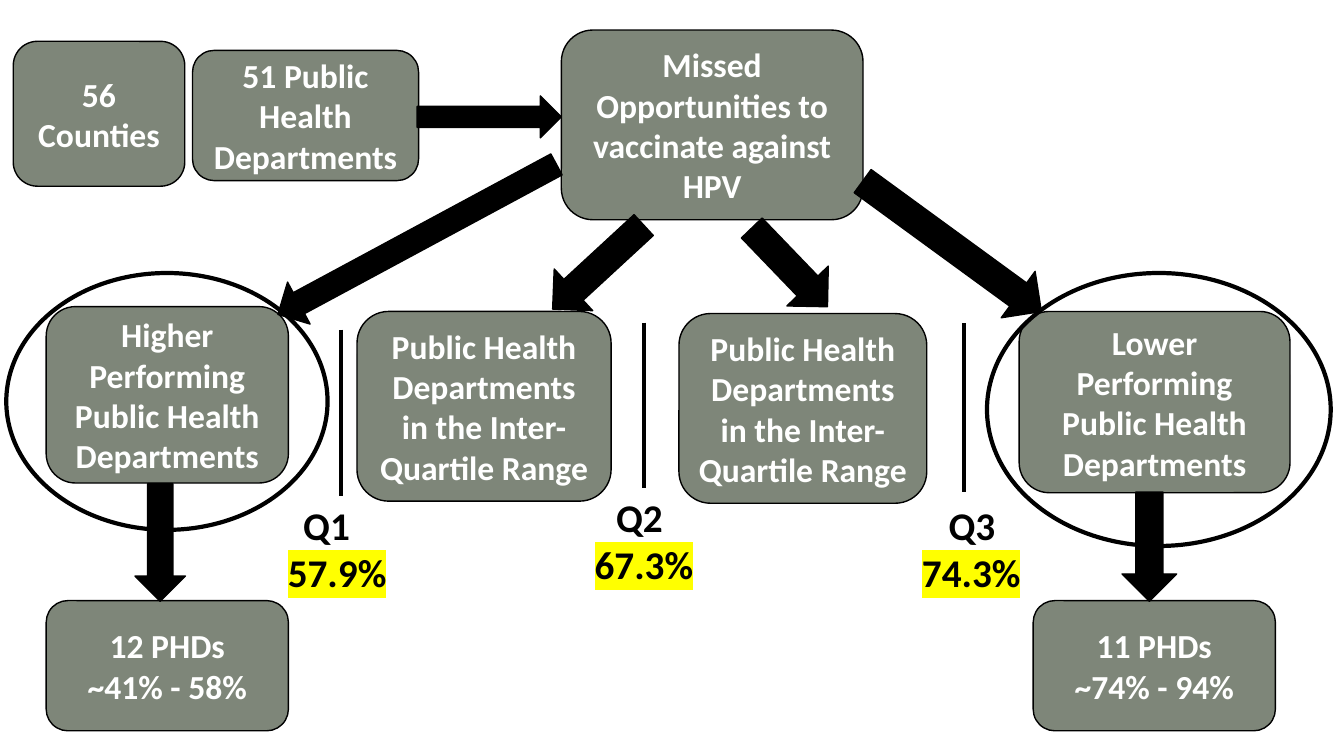
import pptx
import pptx.dml.color
import pptx.enum.shapes
import pptx.enum.text
import pptx.oxml.ns
import pptx.oxml.xmlchemy
import pptx.util

Pt = pptx.util.Pt
SHAPES = pptx.enum.shapes.MSO_SHAPE
ALIGN = pptx.enum.text.PP_ALIGN
FONT = "Calibri"
COLORS = {"box": "7E8679", "ink": "000000", "paper": "FFFFFF", "mark": "FFFF00"}

INTER_QUARTILE = "Public Health Departments in the Inter-Quartile Range"
BOXES = [
    (401, 21.5, 215.5, 135.5, ["Missed Opportunities to vaccinate against HPV"]),
    (485, 224, 177, 135.5, [INTER_QUARTILE]),
    (255, 222.5, 181.5, 135.5, [INTER_QUARTILE]),
    (33, 219, 173, 126, ["Higher Performing Public Health Departments"]),
    (728, 222.5, 193.5, 129.5, ["Lower Performing Public Health Departments"]),
    (9.5, 29.5, 122.5, 103.5, ["56 Counties"]),
    (137.5, 36, 161.5, 93, ["51 Public Health Departments"]),
    (738, 429, 173, 93, ["11 PHDs", "~74% - 94%"]),
    (33, 429, 173, 93, ["12 PHDs", "~41% - 58%"]),
]
ARROWS = [
    (SHAPES.RIGHT_ARROW, 298, 68.5, 103, 30, 0),
    (SHAPES.RIGHT_ARROW, 185, 154, 226, 34, 151.7),
    (SHAPES.RIGHT_ARROW, 383, 170.5, 88.5, 40.5, 137.3),
    (SHAPES.RIGHT_ARROW, 525, 170.5, 78, 41, 46.1),
    (SHAPES.RIGHT_ARROW, 601, 155.5, 158, 41, 36.1),
    (SHAPES.DOWN_ARROW, 96.5, 345.5, 36, 84, 0),
    (SHAPES.DOWN_ARROW, 801.5, 351.5, 39, 78, 0),
]
QUARTILES = [
    (198.5, 354.5, 89.5, "Q1", "57.9%", ALIGN.LEFT, 11, 0),
    (398, 348.5, 117.5, "Q2", "67.3%", ALIGN.CENTER, 0, 6.3),
    (651.5, 354.5, 87, "Q3", "74.3%", ALIGN.LEFT, 19, 0),
]
DIVIDERS = [(243.5, 235.5, 354.5), (460, 230.5, 348.5), (688.5, 231, 351.5)]
RINGS = [(4.5, 195, 229.5, 183.5), (705, 195, 245.5, 195)]


def rgb(name):
    """Return the named colour."""
    return pptx.dml.color.RGBColor.from_string(COLORS[name])


def add_text(paragraph, text, size, color):
    """Add one bold run and return it."""
    run = paragraph.add_run()
    run.text = text
    run.font.name, run.font.size, run.font.bold = FONT, Pt(size), True
    run.font.color.rgb = rgb(color)
    return run


def highlight(run):
    """Mark a formatted run in the highlight colour."""
    mark = pptx.oxml.xmlchemy.OxmlElement("a:highlight")
    color = pptx.oxml.xmlchemy.OxmlElement("a:srgbClr")
    color.set("val", COLORS["mark"])
    mark.append(color)
    run.font._element.find(pptx.oxml.ns.qn("a:latin")).addprevious(mark)


def add_outlined(slide, kind, left, top, width, height, fill=None, weight=1):
    """Add a preset shape with a black outline and an optional fill."""
    shape = slide.shapes.add_shape(kind, Pt(left), Pt(top), Pt(width), Pt(height))
    shape.shadow.inherit = False
    if fill:
        shape.fill.solid()
        shape.fill.fore_color.rgb = rgb(fill)
    else:
        shape.fill.background()
    shape.line.color.rgb = rgb("ink")
    shape.line.width = Pt(weight)
    return shape


def add_box(slide, left, top, width, height, lines):
    """Add a rounded box with centred white lines of text."""
    shape = add_outlined(slide, SHAPES.ROUNDED_RECTANGLE, left, top, width, height, "box")
    frame = shape.text_frame
    frame.word_wrap = True
    frame.vertical_anchor = pptx.enum.text.MSO_ANCHOR.MIDDLE
    for index, line in enumerate(lines):
        paragraph = frame.add_paragraph() if index else frame.paragraphs[0]
        paragraph.alignment = ALIGN.CENTER
        add_text(paragraph, line, 24, "paper")


def add_arrow(slide, kind, left, top, width, height, rotation):
    """Add a black block arrow."""
    add_outlined(slide, kind, left, top, width, height, "ink").rotation = rotation


def add_quartile(slide, left, top, width, name, value, alignment, *indents):
    """Add a quartile name above its highlighted value."""
    box = slide.shapes.add_textbox(Pt(left), Pt(top), Pt(width), Pt(75))
    frame = box.text_frame
    frame.word_wrap = True
    frame.auto_size = pptx.enum.text.MSO_AUTO_SIZE.SHAPE_TO_FIT_TEXT
    paragraphs = [frame.paragraphs[0], frame.add_paragraph()]
    for paragraph, indent in zip(paragraphs, indents):
        paragraph.alignment = alignment
        paragraph._p.get_or_add_pPr().set("marL", str(Pt(indent)))
    add_text(paragraphs[0], name, 28, "ink")
    highlight(add_text(paragraphs[1], value, 28, "ink"))


def add_divider(slide, x, top, bottom):
    """Add a vertical line between two groups."""
    line = slide.shapes.add_connector(
        pptx.enum.shapes.MSO_CONNECTOR.STRAIGHT, Pt(x), Pt(top), Pt(x), Pt(bottom))
    line.line.color.rgb = rgb("ink")
    line.line.width = Pt(3)
    line._element.spPr.append(pptx.oxml.xmlchemy.OxmlElement("a:effectLst"))


def main():
    """Build the slide and save it."""
    presentation = pptx.Presentation()
    presentation.slide_width, presentation.slide_height = Pt(960), Pt(540)
    slide = presentation.slides.add_slide(presentation.slide_layouts[6])
    for box in BOXES:
        add_box(slide, *box)
    for arrow in ARROWS:
        add_arrow(slide, *arrow)
    for quartile in QUARTILES:
        add_quartile(slide, *quartile)
    for ring in RINGS:
        add_outlined(slide, SHAPES.OVAL, *ring, weight=3)
    for divider in DIVIDERS:
        add_divider(slide, *divider)
    presentation.save("out.pptx")


if __name__ == "__main__":
    main()
